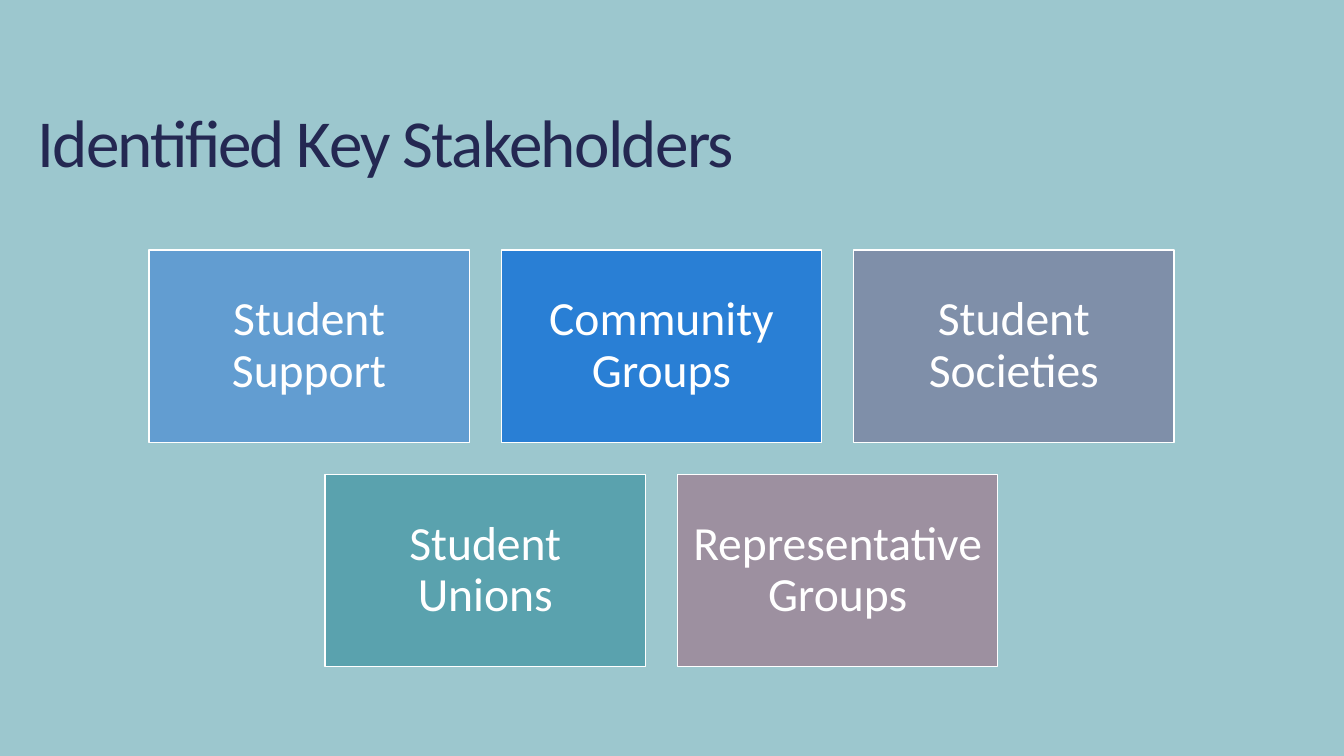
from dataclasses import dataclass

from pptx import Presentation
from pptx.dml.color import RGBColor
from pptx.enum.shapes import MSO_SHAPE as Shape
from pptx.enum.text import MSO_ANCHOR as Anchor, PP_ALIGN as Align
from pptx.util import Pt


@dataclass(frozen=True)
class Theme:
    font: str = "Calibri"
    background: str = "9CC7CE"
    title: str = "242852"
    white: str = "FFFFFF"
    title_size: int = 48
    box_size: int = 34


theme = Theme()


def color(value):
    return RGBColor.from_string(value)


def write(shape, text, size, text_color, align, line_spacing):
    """Put one vertically centred, wrapped line of text in the shape."""
    frame = shape.text_frame
    frame.word_wrap = True
    frame.vertical_anchor = Anchor.MIDDLE
    paragraph = frame.paragraphs[0]
    paragraph.alignment = align
    paragraph.line_spacing = line_spacing
    run = paragraph.add_run()
    run.text = text
    run.font.name = theme.font
    run.font.size = Pt(size)
    run.font.color.rgb = color(text_color)
    return run


presentation = Presentation()
presentation.slide_width, presentation.slide_height = Pt(960), Pt(540)
slide = presentation.slides.add_slide(presentation.slide_layouts[6])
slide.background.fill.solid()
slide.background.fill.fore_color.rgb = color(theme.background)

title = slide.shapes.add_textbox(Pt(19.5), Pt(39.6), Pt(915), Pt(130.3))
title_run = write(title, "Identified Key Stakeholders", theme.title_size,
                  theme.title, Align.LEFT, 0.85)
title_run.font._element.set("spc", "-120")

# Each row of stakeholder boxes is centred on the same vertical axis
stakeholder_rows = [
    [("Student Support", "629DD1"), ("Community Groups", "297FD5"),
     ("Student Societies", "7F8FA9")],
    [("Student Unions", "5AA2AE"), ("Representative Groups", "9D90A0")],
]
center, top = 472.5, 178.6
width, height, gap = 228.8, 137.3, 22.9

for row_index, row in enumerate(stakeholder_rows):
    row_left = center - (len(row) * (width + gap) - gap) / 2
    row_top = top + row_index * (height + gap)
    for column, (name, fill) in enumerate(row):
        box = slide.shapes.add_shape(
            Shape.RECTANGLE, Pt(row_left + column * (width + gap)),
            Pt(row_top), Pt(width), Pt(height))
        box.shadow.inherit = False
        box.fill.solid()
        box.fill.fore_color.rgb = color(fill)
        box.line.color.rgb = color(theme.white)
        box.line.width = Pt(1)
        frame = box.text_frame
        frame.margin_left = frame.margin_right = Pt(10)
        frame.margin_top = frame.margin_bottom = Pt(10)
        write(box, name, theme.box_size, theme.white, Align.CENTER, 0.9)

presentation.save("out.pptx")
